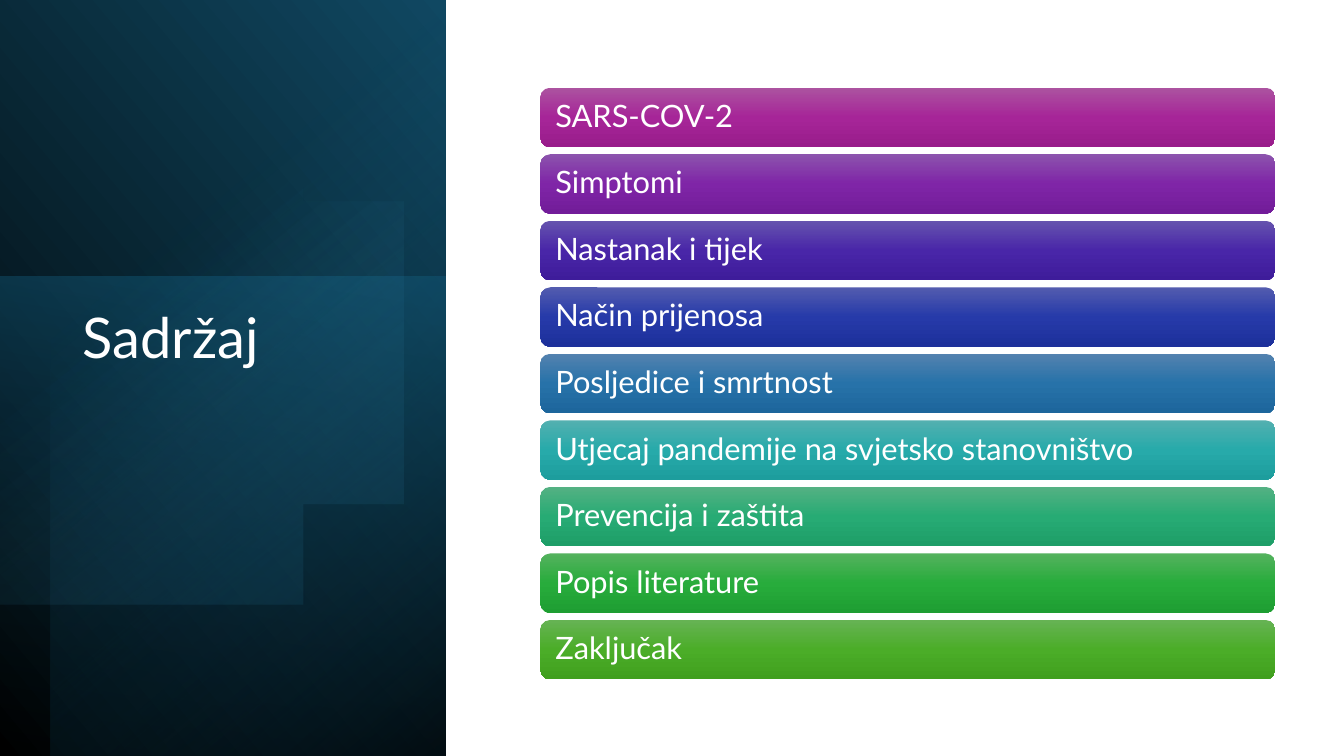
"""Build the contents slide: a dark title panel beside nine coloured topic bars."""
from math import cos, radians, sin

from lxml import etree
from pptx import Presentation
from pptx.dml.color import RGBColor
from pptx.enum.shapes import MSO_SHAPE
from pptx.enum.text import MSO_ANCHOR, PP_ALIGN
from pptx.oxml.ns import qn
from pptx.util import Inches, Pt

RECTANGLE, ROUNDED = MSO_SHAPE.RECTANGLE, MSO_SHAPE.ROUNDED_RECTANGLE
TOP, MIDDLE, LEFT = MSO_ANCHOR.TOP, MSO_ANCHOR.MIDDLE, PP_ALIGN.LEFT

HEADING = "Sadržaj"
TOPICS = [
    ("SARS-COV-2", ("AC53A0", "A62598", "991C8B")),
    ("Simptomi", ("8C53AD", "7F25A7", "721C99")),
    ("Nastanak i tijek", ("6553AE", "4926A8", "3E1C9A")),
    ("Način prijenosa", ("535CAF", "263AA9", "1D309B")),
    ("Posljedice i smrtnost", ("5382AF", "2772A9", "1D669C")),
    ("Utjecaj pandemije na svjetsko stanovništvo", ("53B0B0", "27AAAA", "1D9D9D")),
    ("Prevencija i zaštita", ("54B183", "27AB74", "1E9E68")),
    ("Popis literature", ("54B25E", "28AC3C", "1E9E32")),
    ("Zaključak", ("66B354", "4BAD28", "409F1E")),
]

THEME = {
    "font": "Lato", "text": "FFFFFF", "heading_size": 40, "topic_size": 22,
    "base": [(0, "000000", 100), (100, "104862", 100)],
    "glow": [(0, "156082", 50), (100, "0B3041", 0)],
    "shade": [(0, "000000", 59), (69, "156082", 0)],
    "disc": [(39, "46B1E1", 0), (100, "104862", 26)],
}

SLIDE_W, SLIDE_H = 13.33, 7.5
PANEL_LAYERS = [
    ((-1.55, 1.55, 7.52, 4.42), 90, True, "base", 310),
    ((-0.17, 2.91, 4.76, 4.42), 270, False, "glow", 190),
    ((-1.29, 1.79, 7.5, 3.92), 270, True, "shade", 220),
]
DISC_X, DISC_Y, DISC_RADIUS, DISC_SWEEP, DISC_ANGLE = 1.43, 3.46, 2.62, 123, 52
HEADING_BOX = (0.72, 3.03, 3.15, 3.36)
BAR_LEFT, BAR_TOP, BAR_W, BAR_H, BAR_PITCH = 5.36, 0.87, 7.29, 0.59, 0.66


def paint(shape, stops, angle):
    shape.shadow.inherit = False
    shape.line.fill.background()
    shape.fill.background()
    gradient = etree.Element(qn("a:gradFill"), rotWithShape="1")
    stop_list = etree.SubElement(gradient, qn("a:gsLst"))
    for position, colour, opacity in stops:
        stop = etree.SubElement(stop_list, qn("a:gs"), pos=str(position * 1000))
        tint = etree.SubElement(stop, qn("a:srgbClr"), val=colour)
        if opacity < 100:
            etree.SubElement(tint, qn("a:alpha"), val=str(opacity * 1000))
    etree.SubElement(gradient, qn("a:lin"), ang=str(angle * 60000), scaled="0")
    properties = shape._element.spPr
    properties.replace(properties.find(qn("a:noFill")), gradient)


def write(shape, text, size, anchor, inset):
    frame = shape.text_frame
    frame.text = text
    frame.word_wrap = True
    frame.vertical_anchor = anchor
    frame.margin_left = frame.margin_right = Inches(inset)
    paragraph = frame.paragraphs[0]
    paragraph.alignment = LEFT
    paragraph.line_spacing = 0.9
    font = paragraph.runs[0].font
    font.name, font.size = THEME["font"], Pt(size)
    font.color.rgb = RGBColor.from_string(THEME["text"])


def add_panel(shapes):
    for box, rotation, flipped, stops, angle in PANEL_LAYERS:
        layer = shapes.add_shape(RECTANGLE, *map(Inches, box))
        layer.rotation = rotation
        if flipped:
            layer._element.spPr.xfrm.set("flipH", "1")
        paint(layer, THEME[stops], angle)
    rim = [(DISC_X + DISC_RADIUS * cos(radians(turn)),
            DISC_Y + DISC_RADIUS * sin(radians(turn)))
           for turn in range(-DISC_SWEEP, DISC_SWEEP + 1, 2)]
    outline = shapes.build_freeform(*rim[0], scale=Inches(1))
    outline.add_line_segments(rim[1:], close=True)
    paint(outline.convert_to_shape(), THEME["disc"], DISC_ANGLE)


def add_heading(shapes):
    heading = shapes.title
    heading.left, heading.top, heading.width, heading.height = map(Inches, HEADING_BOX)
    write(heading, HEADING, THEME["heading_size"], TOP, 0.1)
    shapes._spTree.append(heading._element)


def add_topics(shapes):
    for row, (topic, colours) in enumerate(TOPICS):
        box = (BAR_LEFT, BAR_TOP + row * BAR_PITCH, BAR_W, BAR_H)
        bar = shapes.add_shape(ROUNDED, *map(Inches, box))
        paint(bar, [(50 * step, colour, 100) for step, colour in enumerate(colours)], 90)
        write(bar, topic, THEME["topic_size"], MIDDLE, 0.12)


def main():
    deck = Presentation()
    deck.slide_width, deck.slide_height = Inches(SLIDE_W), Inches(SLIDE_H)
    shapes = deck.slides.add_slide(deck.slide_layouts[5]).shapes
    add_panel(shapes)
    add_heading(shapes)
    add_topics(shapes)
    deck.save("out.pptx")


if __name__ == "__main__":
    main()
